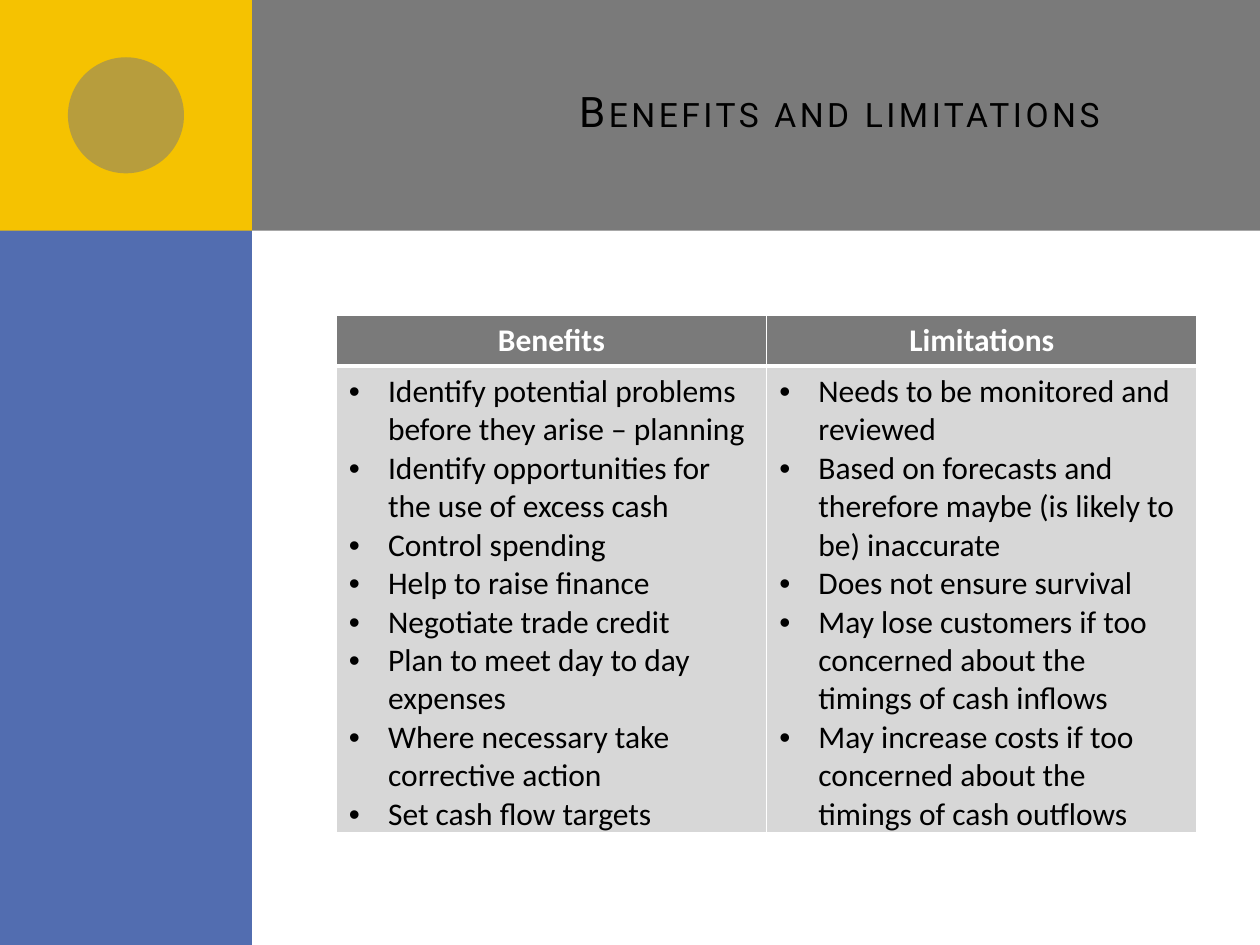
from lxml import etree
from pptx import Presentation
from pptx import util as u
from pptx.dml import color as col
from pptx.enum import shapes, text
from pptx.oxml import ns

HUES = {"gray": "7A7A7A", "blue": "526DB0", "gold": "F5C201",
        "pale": "D7D7D7", "white": "FFFFFF", "black": "000000"}
LISTS = {
    "Benefits": [
        "Identify potential problems before they arise – planning",
        "Identify opportunities for the use of excess cash",
        "Control spending",
        "Help to raise finance",
        "Negotiate trade credit",
        "Plan to meet day to day expenses",
        "Where necessary take corrective action",
        "Set cash flow targets",
    ],
    "Limitations": [
        "Needs to be monitored and reviewed",
        "Based on forecasts and therefore maybe (is likely to be) inaccurate",
        "Does not ensure survival",
        "May lose customers if too concerned about the timings of cash inflows",
        "May increase costs if too concerned about the timings of cash outflows",
    ],
}


def hue(name):
    return col.RGBColor.from_string(HUES[name])


def add(top, tag, **attrs):
    return etree.SubElement(top, ns.qn(tag), attrs)


def write(frame, lines, font="Calibri", size=18, tint="black", bold=False,
          align=text.PP_ALIGN.LEFT, bullet=False, **extra):
    for i, line in enumerate(lines):
        para = frame.add_paragraph() if i else frame.paragraphs[0]
        para.alignment = align
        if bullet:
            props = para._p.get_or_add_pPr()
            props.set("marL", str(u.Cm(0.79)))
            props.set("indent", str(-u.Cm(0.79)))
            add(props, "a:buFont", typeface="Arial")
            add(props, "a:buChar", char="•")
        run = para.add_run()
        run.text = line
        run.font.name, run.font.size, run.font.bold = font, u.Pt(size), bold
        run.font.color.rgb = hue(tint)
        for key, value in extra.items():
            run.font._element.set(key, value)


class Deck:
    def __init__(self, wide, high):
        self.show = Presentation()
        self.show.slide_width, self.show.slide_height = u.Cm(wide), u.Cm(high)
        self.slide = self.show.slides.add_slide(self.show.slide_layouts[6])

    def shape(self, kind, tint, *box, alpha=None):
        item = self.slide.shapes.add_shape(kind, *map(u.Cm, box))
        item.shadow.inherit = False
        item.fill.solid()
        item.fill.fore_color.rgb = hue(tint)
        item.line.fill.background()
        if alpha:
            paint = item._element.spPr.find(ns.qn("a:solidFill"))
            add(paint[0], "a:alpha", val=str(alpha * 1000))

    def title(self, words, *box):
        frame = self.slide.shapes.add_textbox(*map(u.Cm, box)).text_frame
        frame.word_wrap = True
        frame.vertical_anchor = text.MSO_ANCHOR.MIDDLE
        write(frame, [words], font="Roboto", size=24,
              align=text.PP_ALIGN.RIGHT, spc="200", cap="small")

    def cell(self, cell, tint, **edges):
        props = cell._tc.get_or_add_tcPr()
        for side in "LRTB":
            edge = add(props, "a:ln" + side, w=str(u.Pt(edges.get(side, 1))))
            paint = add(edge, "a:solidFill")
            add(paint, "a:srgbClr", val=HUES["white"])
        cell.fill.solid()
        cell.fill.fore_color.rgb = hue(tint)

    def table(self, lists, rows, left, top, wide):
        grid = self.slide.shapes.add_table(
            len(rows), len(lists), u.Cm(left), u.Cm(top),
            u.Cm(wide), u.Cm(sum(rows))).table
        for row, high in zip(grid.rows, rows):
            row.height = u.Cm(high)
        for i, (name, items) in enumerate(lists.items()):
            head, body = grid.cell(0, i), grid.cell(1, i)
            self.cell(head, "gray", B=3)
            self.cell(body, "pale", T=3)
            write(head.text_frame, [name], tint="white", bold=True,
                  align=text.PP_ALIGN.CENTER)
            write(body.text_frame, items, bullet=True)


def main():
    wide, high, side, band, dot = 25.4, 19.05, 5.08, 4.65, 2.34
    rect, oval = shapes.MSO_SHAPE.RECTANGLE, shapes.MSO_SHAPE.OVAL
    deck = Deck(wide, high)
    deck.shape(rect, "gray", 1.27, 0, wide - 1.27, band)
    deck.shape(rect, "blue", 0, 0, side, high)
    deck.shape(rect, "gold", 0, 0, side, band)
    deck.shape(oval, "gray", (side - dot) / 2, (band - dot) / 2, dot, dot,
               alpha=50)
    deck.title("Benefits and limitations", 6.78, 0.64, 17.35, 3.18)
    deck.table(LISTS, [1.03, 9.4], 6.78, 6.35, 17.35)
    deck.show.save("out.pptx")


if __name__ == "__main__":
    main()
